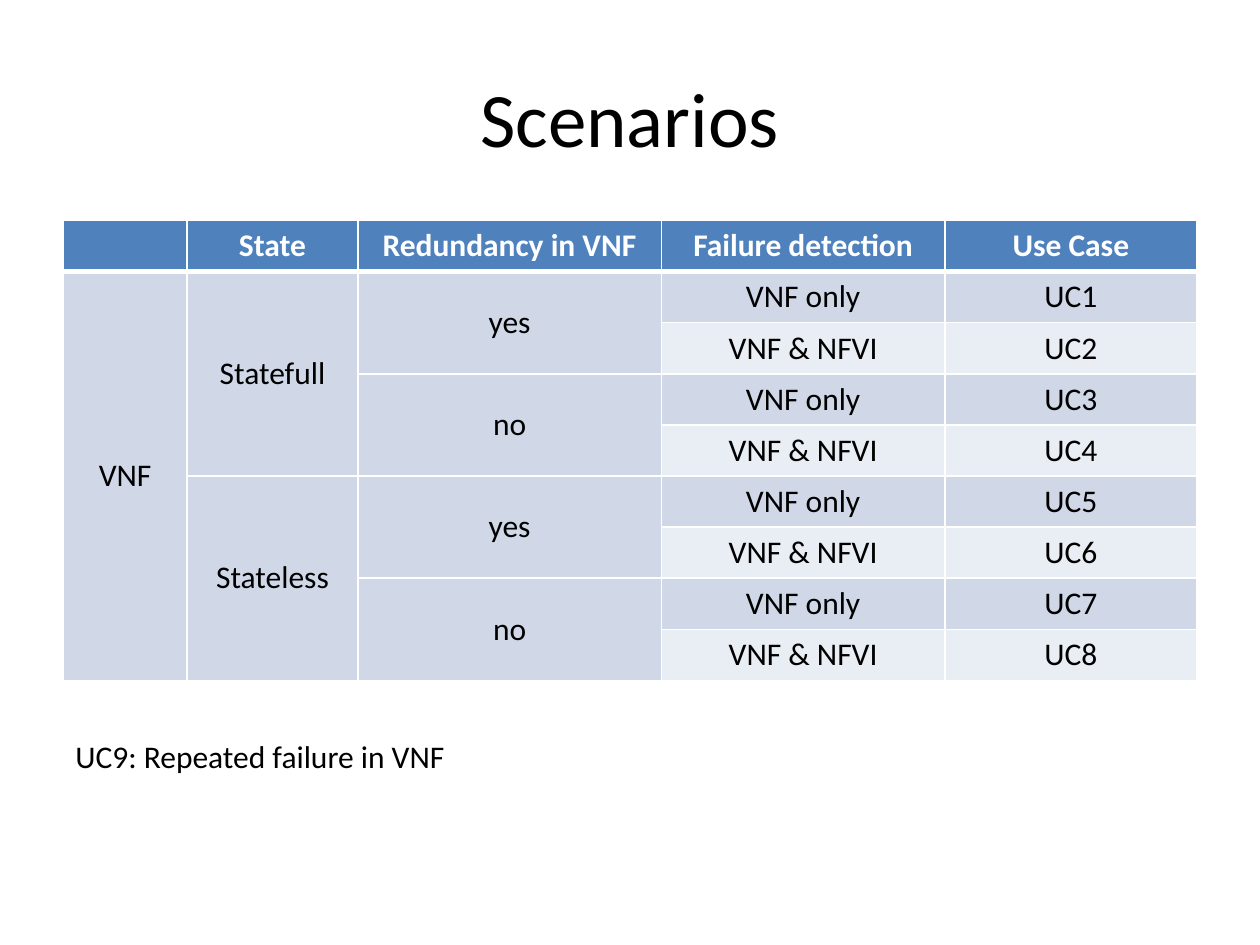
from dataclasses import dataclass

from lxml import etree
from pptx import Presentation
from pptx.dml.color import RGBColor
from pptx.enum.text import MSO_ANCHOR, MSO_AUTO_SIZE, PP_ALIGN
from pptx.oxml.ns import qn
from pptx.util import Pt

LEFT, CENTER = PP_ALIGN.LEFT, PP_ALIGN.CENTER
TOP, MIDDLE = MSO_ANCHOR.TOP, MSO_ANCHOR.MIDDLE
FIT_SHAPE = MSO_AUTO_SIZE.SHAPE_TO_FIT_TEXT


@dataclass(frozen=True)
class Theme:
    font: str = "Calibri"
    text: str = "000000"
    white: str = "FFFFFF"
    header: str = "4F81BD"
    dark_band: str = "D0D8E8"
    light_band: str = "E9EDF4"
    title_size: int = 44
    body_size: int = 18


THEME = Theme()


def write(frame, text, size=THEME.body_size, color=THEME.text, bold=False, align=LEFT):
    paragraph = frame.paragraphs[0]
    paragraph.alignment = align
    run = paragraph.add_run()
    run.text = text
    run.font.name = THEME.font
    run.font.size = Pt(size)
    run.font.bold = bold
    run.font.color.rgb = RGBColor.from_string(color)


def style_cell(cell, fill, top=1, bottom=1):
    properties = cell._tc.get_or_add_tcPr()
    for side, width in (("L", 1), ("R", 1), ("T", top), ("B", bottom)):
        line = etree.SubElement(properties, qn(f"a:ln{side}"), w=str(Pt(width)))
        solid = etree.SubElement(line, qn("a:solidFill"))
        etree.SubElement(solid, qn("a:srgbClr"), val=THEME.white)
    cell.fill.solid()
    cell.fill.fore_color.rgb = RGBColor.from_string(fill)


presentation = Presentation()
presentation.slide_width, presentation.slide_height = Pt(720), Pt(540)
slide = presentation.slides.add_slide(presentation.slide_layouts[5])

# Title
title = slide.shapes.title
title.left, title.top, title.width, title.height = Pt(36), Pt(21.6), Pt(648), Pt(90)
title.text_frame.vertical_anchor = MIDDLE
write(title.text_frame, "Scenarios", size=THEME.title_size, align=CENTER)

# Scenario table
HEADERS = ["", "State", "Redundancy in VNF", "Failure detection", "Use Case"]
COLUMN_WIDTHS = [71, 97.5, 173.5, 162, 144]
ROW_HEIGHT = 29.2
CASE_COUNT = 8
row_count = CASE_COUNT + 1
scenarios = slide.shapes.add_table(
    row_count, len(HEADERS), Pt(36), Pt(126), Pt(sum(COLUMN_WIDTHS)), Pt(ROW_HEIGHT * row_count)
).table
for column, width in zip(scenarios.columns, COLUMN_WIDTHS):
    column.width = Pt(width)
for row in scenarios.rows:
    row.height = Pt(ROW_HEIGHT)

# Header row
for column, heading in enumerate(HEADERS):
    cell = scenarios.cell(0, column)
    style_cell(cell, THEME.header, bottom=3)
    cell.vertical_anchor = TOP
    if heading:
        write(cell.text_frame, heading, color=THEME.white, bold=True, align=CENTER)

# Each column splits the cases into equal groups
COLUMN_GROUPS = [
    ["VNF"],
    ["Statefull", "Stateless"],
    ["yes", "no"] * 2,
    ["VNF only", "VNF & NFVI"] * 4,
    [f"UC{case}" for case in range(1, CASE_COUNT + 1)],
]
for column, groups in enumerate(COLUMN_GROUPS):
    span = CASE_COUNT // len(groups)
    for index, label in enumerate(groups):
        first = 1 + index * span
        fill = THEME.light_band if span == 1 and index % 2 else THEME.dark_band
        for row in range(first, first + span):
            style_cell(scenarios.cell(row, column), fill, top=3 if row == 1 else 1)
        cell = scenarios.cell(first, column)
        if span > 1:
            cell.merge(scenarios.cell(first + span - 1, column))
        cell.vertical_anchor = MIDDLE
        write(cell.text_frame, label, align=CENTER)

# Extra use case below the table
extra_case = slide.shapes.add_textbox(Pt(36), Pt(417.6), Pt(228), Pt(29)).text_frame
extra_case.word_wrap = False
extra_case.auto_size = FIT_SHAPE
write(extra_case, "UC9: Repeated failure in VNF")

presentation.save("out.pptx")
